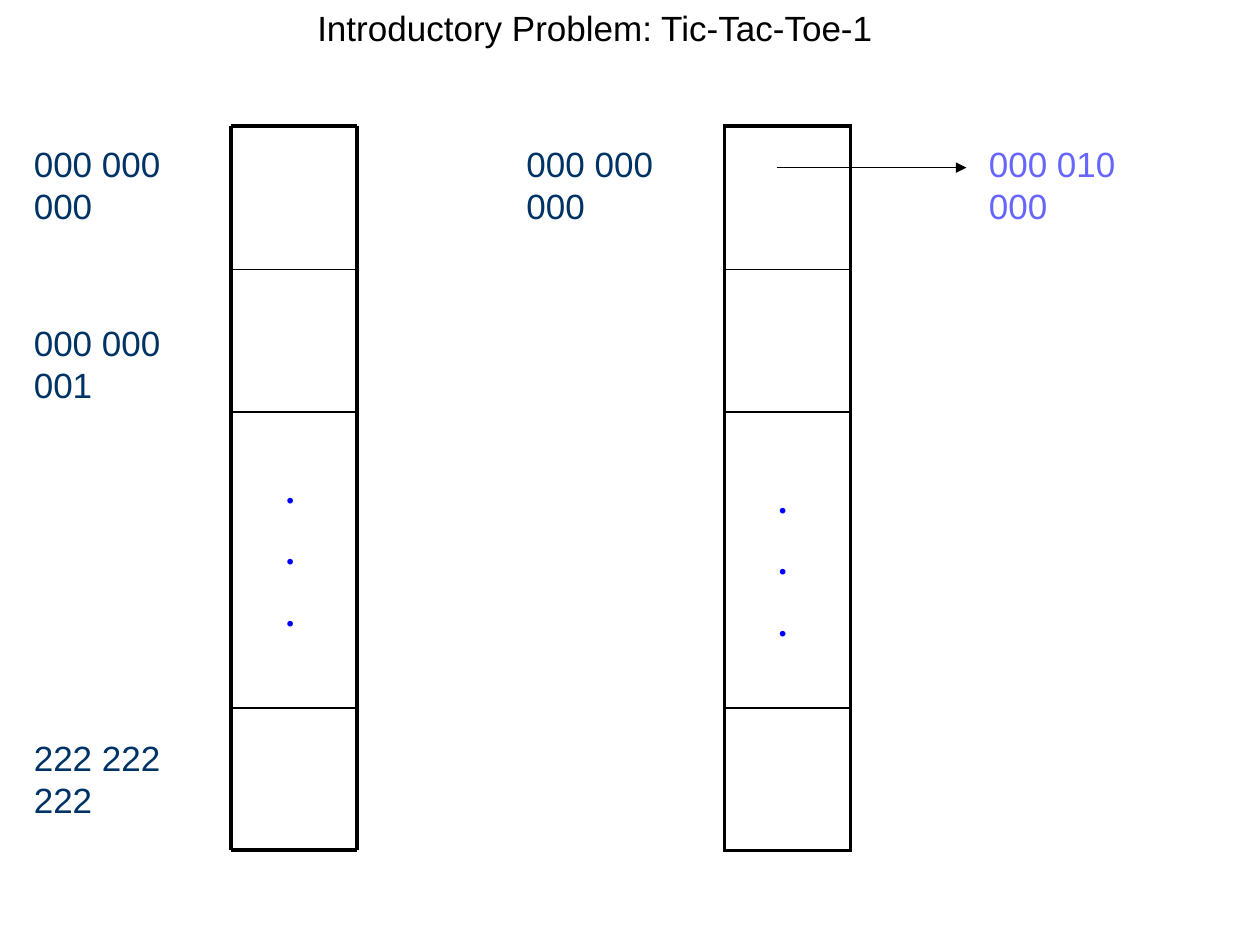
from itertools import accumulate

from pptx import Presentation
from pptx.dml.color import RGBColor
from pptx.enum.shapes import MSO_CONNECTOR
from pptx.oxml.ns import qn
from pptx.util import Inches, Pt
from lxml.etree import SubElement

NAVY, VIOLET, BLUE, BLACK = "003365", "6666FF", "0000FF", "000000"
TOP, THICK, THIN = 1, 2.25, 1
ROWS = [1.14, 1.13, 2.35, 1.13]
LABEL = {"name": "Arial", "size": Pt(20)}
DOT = {"name": "Times New Roman", "size": Pt(20), "bold": True}


def color(code):
    return RGBColor.from_string(code)


class Deck:
    def __init__(self):
        self.prs = Presentation()
        self.prs.slide_width, self.prs.slide_height = Inches(10), Inches(7.5)
        self.slide = self.prs.slides.add_slide(self.prs.slide_layouts[6])

    def text(self, lines, x, y, w, h=0.43, ink=BLACK, style=LABEL, wrap=False):
        box = self.slide.shapes.add_textbox(*map(Inches, (x, y, w, h)))
        frame = box.text_frame
        frame.word_wrap = wrap
        for i, line in enumerate(lines):
            para = frame.add_paragraph() if i else frame.paragraphs[0]
            if i:
                para.space_before = Pt(11)
            run = para.add_run()
            run.text = line
            for key, value in style.items():
                setattr(run.font, key, value)
            run.font.color.rgb = color(ink)

    def line(self, x1, y1, x2, y2, width, arrow=False):
        link = self.slide.shapes.add_connector(
            MSO_CONNECTOR.STRAIGHT, *map(Inches, (x1, y1, x2, y2)))
        link.line.color.rgb = color(BLACK)
        link.line.width = Pt(width)
        if arrow:
            SubElement(link.line._get_or_add_ln(), qn("a:tailEnd"), type="triangle")
        SubElement(link._element.spPr, qn("a:effectLst"))

    def edge(self, cell, side, width):
        """Draw one border of a table cell."""
        line = SubElement(cell._tc.get_or_add_tcPr(), qn("a:" + side),
                          w=str(Pt(width)))
        fill = SubElement(line, qn("a:solidFill"))
        SubElement(fill, qn("a:srgbClr"), val=BLACK)

    def table(self, x, y, w, rows):
        frame = self.slide.shapes.add_table(
            len(rows), 1, *map(Inches, (x, y, w, sum(rows))))
        grid = frame.table
        grid.first_row = grid.horz_banding = False
        last = len(rows) - 1
        for i, high in enumerate(rows):
            grid.rows[i].height = Inches(high)
            cell = grid.cell(i, 0)
            widths = {"lnL": THICK, "lnR": THICK,
                      "lnT": THIN if i else THICK,
                      "lnB": THIN if i < last else THICK}
            for side, width in widths.items():
                self.edge(cell, side, width)
            cell.fill.background()

    def frame(self, x, y, w, rows):
        """Draw a column of cells from single lines."""
        ends = list(accumulate(rows, initial=y))
        for end in ends:
            outer = end in (ends[0], ends[-1])
            self.line(x, end, x + w, end, THICK if outer else THIN)
        for side in (x, x + w):
            self.line(side, y, side, ends[-1], THICK)


def main():
    deck = Deck()
    deck.text(["Introductory Problem: Tic-Tac-Toe-1"], 2.42, 0, 4.67)

    deck.frame(1.83, TOP, 1, ROWS)
    states = [("000 000 000", 1.08), ("000 000 001", 2.5), ("222 222 222", 5.8)]
    for state, y in states:
        deck.text([state], 0.17, y, 1.74, ink=NAVY)

    deck.table(5.75, TOP, 1, ROWS)
    deck.text(["000 000 000"], 4.08, 1.08, 1.74, ink=NAVY)
    deck.line(6.17, 1.33, 7.67, 1.33, 0.75, arrow=True)
    deck.text(["000 010 000"], 7.75, 1.08, 1.74, ink=VIOLET)

    for x, y in [(2.17, 3.67), (6.08, 3.75)]:
        deck.text(["."] * 3, x, y, 0.33, 1.43, BLUE, DOT, wrap=True)

    deck.prs.save("out.pptx")


if __name__ == "__main__":
    main()
